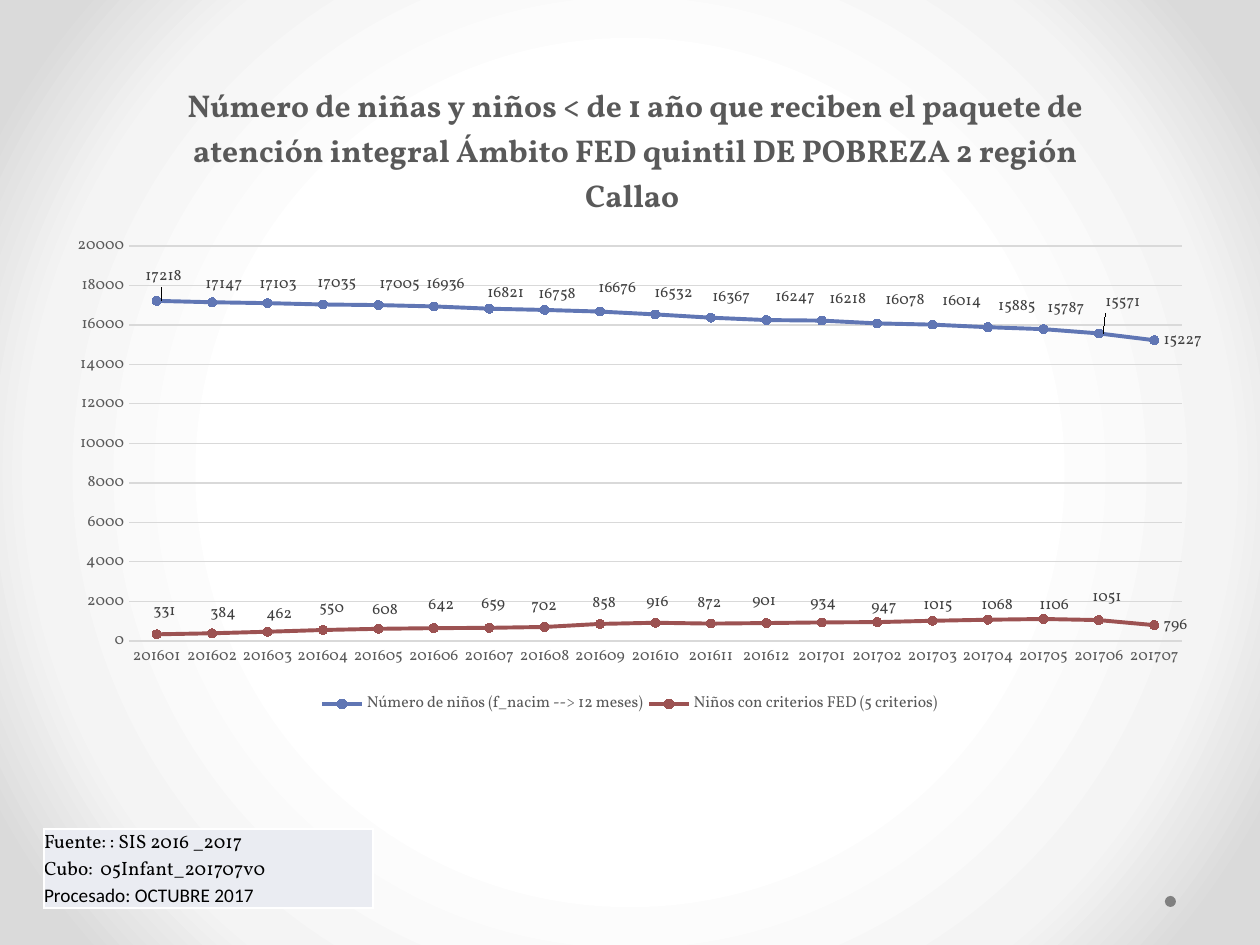
import pptx
import pptx.chart.data
import pptx.dml.color
import pptx.enum.chart
import pptx.enum.shapes
import pptx.enum.text
import pptx.oxml
import pptx.oxml.ns
import pptx.util

PX = 914400 // 126
FONT = "Vollkorn"
COLORS = {"blue": "6076B4", "red": "9C5252", "grid": "D9D9D9", "text": "595959",
          "label": "404040", "black": "000000", "white": "FFFFFF",
          "cell": "EAECF2", "dot": "808080"}
BACKGROUND = [(0, "FFFFFF"), (50, "FFFFFF"), (76, "F4F4F4"), (92, "DADADA"), (100, "DADADA")]

TITLE = ("Número de niñas y niños < de 1 año que reciben el paquete de "
         "atención integral Ámbito FED quintil DE POBREZA 2 región Callao ")
MONTHS = [f"2016{m:02}" for m in range(1, 13)] + [f"2017{m:02}" for m in range(1, 8)]
# Label centres are px on the slide; the last label keeps its default place.
SERIES = [
    {"name": "Número de niños (f_nacim --> 12 meses)", "color": "blue", "label_shift": 28,
     "values": [17218, 17147, 17103, 17035, 17005, 16936, 16821, 16758, 16676, 16532,
                16367, 16247, 16218, 16078, 16014, 15885, 15787, 15571, 15227],
     "labels": [(164, 277), (224, 285), (278, 285), (336, 284), (398, 285), (445, 285),
                (506, 294), (557, 295), (617, 289), (673, 294), (731, 298), (794, 298),
                (848, 300), (904, 301), (961, 302), (1017, 307), (1066, 309), (1124, 303)]},
    {"name": "Niños con criterios FED (5 criterios)", "color": "red", "label_shift": 21,
     "values": [331, 384, 462, 550, 608, 642, 659, 702, 858, 916,
                872, 901, 934, 947, 1015, 1068, 1106, 1051, 796],
     "labels": [(165, 612), (222, 614), (278, 615), (331, 609), (384, 611), (440, 606),
                (493, 605), (543, 607), (604, 604), (658, 603), (709, 604), (764, 602),
                (822, 604), (883, 608), (935, 606), (993, 606), (1051, 606), (1104, 598)]},
]
SOURCE = [("Fuente: : SIS 2016 _2017", FONT), ("Cubo:  05Infant_201707v0", FONT),
          ("Procesado: OCTUBRE 2017", "Calibri")]

CHART = (54, 55, 1150, 665)
PLOT = (129, 246, 1053, 395)
LEGEND = (316, 688, 628, 32)
TITLE_AT = (182, 78)
TABLE = (44, 829, 329, 79)
DOT = (1165, 896, 11, 11)
Y_MAX = 20000


def emu(box):
    return [v * PX for v in box]


def rgb(name):
    return pptx.dml.color.RGBColor.from_string(COLORS[name])


def style(font, size, color, name=FONT, bold=False):
    font.size, font.name, font.bold = pptx.util.Pt(size), name, bold
    font.color.rgb = rgb(color)


def xml(text):
    return pptx.oxml.parse_xml(text)


def layout(x, y, w=None, h=None, target=None, edge=True):
    """Manual chart layout in fractions of the chart."""
    tags = [("layoutTarget", target)] if target else []
    if edge:
        tags += [("xMode", "edge"), ("yMode", "edge")]
    tags += [(t, f"{v:.4f}") for t, v in zip("xywh", (x, y, w, h)) if v is not None]
    body = "".join(f'<c:{t} val="{v}"/>' for t, v in tags)
    return xml(f'<c:layout {pptx.oxml.ns.nsdecls("c")}><c:manualLayout>{body}'
               '</c:manualLayout></c:layout>')


def in_chart(x, y, w=None, h=None):
    left, top, width, height = CHART
    size = (w / width, h / height) if w else (None, None)
    return ((x - left) / width, (y - top) / height, *size)


def put_layout(parent, element, after):
    """Replace the layout of parent, placing it behind the given child."""
    for old in parent.findall(pptx.oxml.ns.qn("c:layout")):
        parent.remove(old)
    if after is None:
        parent.insert(0, element)
    else:
        parent.find(pptx.oxml.ns.qn(after)).addnext(element)


def paint_background(s):
    stops = "".join(f'<a:gs pos="{p * 1000}"><a:srgbClr val="{c}"/></a:gs>' for p, c in BACKGROUND)
    s.background.fill.solid()
    bg = s.background._cSld.bg.bgPr
    bg.replace(bg[0], xml(
        f'<a:gradFill {pptx.oxml.ns.nsdecls("a")} rotWithShape="1"><a:gsLst>{stops}</a:gsLst>'
        '<a:path path="circle"><a:fillToRect l="50000" t="50000" r="50000" b="50000"/></a:path>'
        '</a:gradFill>'))


def style_series(series, data):
    color = rgb(data["color"])
    series.smooth = False
    series.format.line.color.rgb = color
    series.format.line.width = pptx.util.Pt(2.25)
    series.marker.style = pptx.enum.chart.XL_MARKER_STYLE.CIRCLE
    series.marker.size = 5
    series.marker.format.fill.solid()
    series.marker.format.fill.fore_color.rgb = color
    series.marker.format.line.color.rgb = color

    labels = series.data_labels
    labels.show_value = True
    labels.number_format, labels.number_format_is_linked = "0", False
    labels.position = pptx.enum.chart.XL_LABEL_POSITION.RIGHT
    style(labels.font, 9, "label")
    step = PLOT[2] / len(MONTHS)
    for i, (x, y) in enumerate(data["labels"]):
        label = series.points[i].data_label
        style(label.font, 9, "label")
        label.position = pptx.enum.chart.XL_LABEL_POSITION.RIGHT
        point_x = PLOT[0] + (i + 0.5) * step
        point_y = PLOT[1] + PLOT[3] * (1 - data["values"][i] / Y_MAX)
        dx = (x - point_x - data["label_shift"]) / CHART[2]
        dy = (y - point_y) / CHART[3]
        put_layout(label._dLbl, layout(dx, dy, edge=False), "c:idx")


def add_line_chart(s):
    data = pptx.chart.data.CategoryChartData(number_format="0")
    data.categories = MONTHS
    for item in SERIES:
        data.add_series(item["name"], item["values"])
    chart = s.shapes.add_chart(pptx.enum.chart.XL_CHART_TYPE.LINE_MARKERS, *emu(CHART), data).chart
    style(chart.font, 10, "black")
    for series, item in zip(chart.plots[0].series, SERIES):
        style_series(series, item)
    chart.plots[0].vary_by_categories = False

    r = chart.chart_title.text_frame.paragraphs[0].add_run()
    r.text = TITLE
    style(r.font, 18, "text", bold=True)
    chart.chart_title.include_in_layout = False
    put_layout(chart.chart_title._element, layout(*in_chart(*TITLE_AT)), "c:tx")

    chart.has_legend = True
    chart.legend.position = pptx.enum.chart.XL_LEGEND_POSITION.BOTTOM
    chart.legend.include_in_layout = False
    style(chart.legend.font, 9, "text")
    put_layout(chart.legend._element, layout(*in_chart(*LEGEND)), "c:legendPos")
    put_layout(chart._chartSpace.chart.plotArea, layout(*in_chart(*PLOT), target="inner"), None)

    months, counts = chart.category_axis, chart.value_axis
    for axis in (months, counts):
        axis.major_tick_mark = axis.minor_tick_mark = pptx.enum.chart.XL_TICK_MARK.NONE
        style(axis.tick_labels.font, 9, "text")
    counts.minimum_scale, counts.maximum_scale, counts.major_unit = 0, Y_MAX, 2000
    counts.tick_labels.number_format, counts.tick_labels.number_format_is_linked = "0", False
    counts.format.line.fill.background()
    for line in (months.format.line, counts.major_gridlines.format.line):
        line.color.rgb = rgb("grid")
        line.width = pptx.util.Pt(0.75)


def add_source_table(s):
    frame = s.shapes.add_table(1, 1, *emu(TABLE))
    cell = frame.table.cell(0, 0)
    cell.margin_left = cell.margin_right = cell.margin_top = cell.margin_bottom = 0
    cell.vertical_anchor = pptx.enum.text.MSO_ANCHOR.BOTTOM
    for side in "LRTB":
        cell._tc.get_or_add_tcPr().append(xml(
            f'<a:ln{side} {pptx.oxml.ns.nsdecls("a")} w="12700"><a:solidFill>'
            f'<a:srgbClr val="{COLORS["white"]}"/></a:solidFill></a:ln{side}>'))
    cell.fill.solid()
    cell.fill.fore_color.rgb = rgb("cell")
    for i, (text, font) in enumerate(SOURCE):
        p = cell.text_frame.add_paragraph() if i else cell.text_frame.paragraphs[0]
        r = p.add_run()
        r.text = text
        style(r.font, 11, "black", font)


def add_dot(s):
    sp = s.shapes.add_shape(pptx.enum.shapes.MSO_SHAPE.OVAL, *emu(DOT))
    sp.shadow.inherit = False
    sp.fill.solid()
    sp.fill.fore_color.rgb = rgb("dot")
    sp.line.fill.background()


prs = pptx.Presentation()
prs.slide_width, prs.slide_height = emu((1260, 945))
s = prs.slides.add_slide(prs.slide_layouts[6])
paint_background(s)
add_dot(s)
add_source_table(s)
add_line_chart(s)
prs.save("out.pptx")
